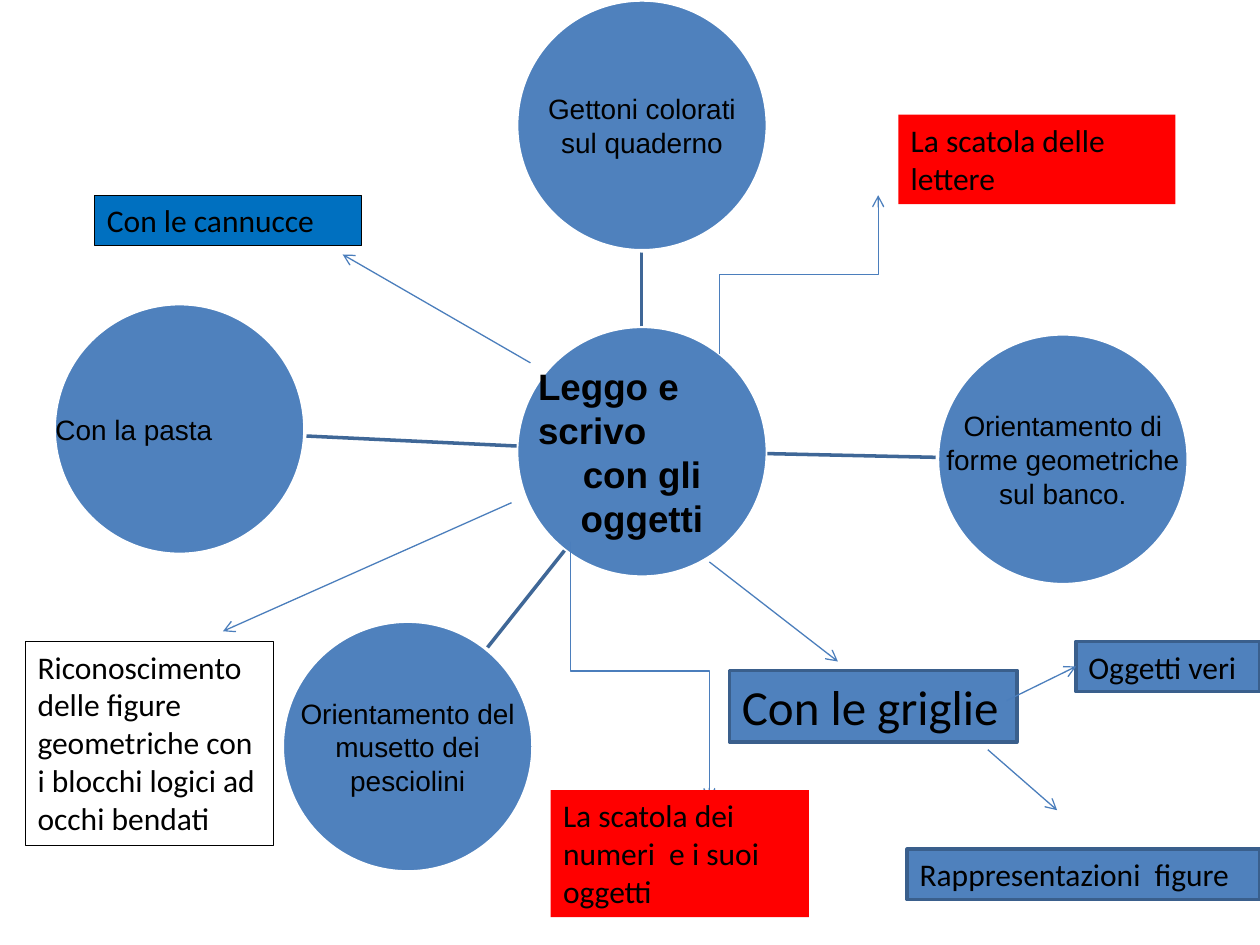
import pptx
import pptx.dml.color
import pptx.enum.shapes
import pptx.enum.text
import pptx.oxml.ns
import pptx.util
from lxml import etree

Inches = pptx.util.Inches
Pt = pptx.util.Pt
RGBColor = pptx.dml.color.RGBColor
ALIGN = pptx.enum.text.PP_ALIGN
SHAPE = pptx.enum.shapes.MSO_SHAPE
CONNECTOR = pptx.enum.shapes.MSO_CONNECTOR
qn = pptx.oxml.ns.qn

BLACK = RGBColor(0x00, 0x00, 0x00)
WHITE = RGBColor(0xFF, 0xFF, 0xFF)
RED = RGBColor(0xFF, 0x00, 0x00)
BLUE = RGBColor(0x4F, 0x81, 0xBD)
BRIGHT_BLUE = RGBColor(0x00, 0x70, 0xC0)
SPOKE_BLUE = RGBColor(0x3F, 0x67, 0x97)
BORDER_BLUE = RGBColor(0x3A, 0x5F, 0x8C)
ARROW_BLUE = RGBColor(0x4B, 0x7E, 0xBC)

DIAMETER = 1.99


class MindMap:
    def __init__(self, page):
        self.page = page

    def set_text(self, frame, lines, size, font, align=ALIGN.LEFT, bold=False):
        frame.word_wrap = True
        frame.text = "\n".join(lines)
        for para in frame.paragraphs:
            para.alignment = align
            para.font.name = font
            para.font.size = Pt(size)
            para.font.bold = bold
            para.font.color.rgb = BLACK

    def shape(self, kind, left, top, width, height, fill, line, weight):
        shape = self.page.shapes.add_shape(
            kind, Inches(left), Inches(top), Inches(width), Inches(height))
        shape.shadow.inherit = False
        if fill is None:
            shape.fill.background()
        else:
            shape.fill.solid()
            shape.fill.fore_color.rgb = fill
        if line is None:
            shape.line.fill.background()
        else:
            shape.line.color.rgb = line
            shape.line.width = Pt(weight)
        return shape

    def circle(self, left, top, lines, size=16, align=ALIGN.CENTER, bold=False, margin=0.01):
        """Draw a disc with a text box over its full width; return the text frame."""
        self.shape(SHAPE.OVAL, left, top, DIAMETER, DIAMETER, BLUE, WHITE, 2)
        box = self.page.shapes.add_textbox(
            Inches(left), Inches(top), Inches(DIAMETER), Inches(DIAMETER))
        frame = box.text_frame
        frame.margin_left = frame.margin_right = Inches(margin)
        frame.margin_top = frame.margin_bottom = Inches(0.01)
        frame.vertical_anchor = pptx.enum.text.MSO_ANCHOR.MIDDLE
        self.set_text(frame, lines, size, "Arial", align, bold)
        return frame

    def label(self, left, top, width, height, text, fill=BLUE, line=BORDER_BLUE,
              weight=2, size=18):
        box = self.shape(SHAPE.RECTANGLE, left, top, width, height, fill, line, weight)
        frame = box.text_frame
        frame.vertical_anchor = pptx.enum.text.MSO_ANCHOR.TOP
        self.set_text(frame, [text], size, "Calibri")
        frame.auto_size = pptx.enum.text.MSO_AUTO_SIZE.SHAPE_TO_FIT_TEXT
        return box

    def connector(self, kind, start, end, color, weight):
        line = self.page.shapes.add_connector(kind, *map(Inches, (*start, *end)))
        line.line.color.rgb = color
        line.line.width = Pt(weight)
        etree.SubElement(line._element.spPr, qn("a:effectLst"))
        return line

    def spoke(self, start, end):
        self.connector(CONNECTOR.STRAIGHT, start, end, SPOKE_BLUE, 2)

    def arrow(self, start, end, kind=CONNECTOR.STRAIGHT):
        line = self.connector(kind, start, end, ARROW_BLUE, 0.75)
        outline = line._element.spPr.find(qn("a:ln"))
        etree.SubElement(outline, qn("a:tailEnd"), type="arrow")
        return line

    def elbow_arrow(self, start, end):
        """Draw a bent arrow that leaves vertically: a horizontal one, turned."""
        (x1, y1), (x2, y2) = start, end
        middle_x, middle_y = (x1 + x2) / 2, (y1 + y2) / 2
        turn = 1 if y2 < y1 else -1
        unturned = [(middle_x + turn * (y - middle_y), middle_y - turn * (x - middle_x))
                    for x, y in (start, end)]
        line = self.arrow(*unturned, kind=CONNECTOR.ELBOW)
        degrees = 90 if turn == 1 else 270
        line._element.spPr.find(qn("a:xfrm")).set("rot", str(degrees * 60000))


def main():
    deck = pptx.Presentation()
    deck.slide_width = Inches(10)
    deck.slide_height = Inches(7.5)
    mind_map = MindMap(deck.slides.add_slide(deck.slide_layouts[6]))

    hub = mind_map.circle(4.1, 2.59, ["Leggo e scrivo", "con gli oggetti"],
                          size=21, bold=True, margin=0.08)
    first = hub.paragraphs[0]
    first.alignment = ALIGN.LEFT
    first._p.get_or_add_pPr().set("marL", str(Inches(0.09)))

    for start, end in [
        ((5.09, 2.59), (5.09, 1.99)),
        ((6.09, 3.6), (7.44, 3.63)),
        ((4.48, 4.37), (3.86, 5.15)),
        ((4.1, 3.54), (2.42, 3.46)),
    ]:
        mind_map.spoke(start, end)

    mind_map.circle(4.1, 0, ["Gettoni colorati", "sul quaderno"])
    mind_map.circle(7.44, 2.65, ["Orientamento di forme geometriche sul banco."])
    mind_map.circle(2.24, 4.93, ["Orientamento del musetto dei pesciolini"])
    mind_map.circle(0.43, 2.41, ["Con la pasta"], align=ALIGN.LEFT)

    for start, end in [
        ((5.63, 4.46), (6.65, 5.25)),
        ((7.84, 5.95), (8.39, 6.43)),
        ((4.21, 2.88), (2.72, 2.02)),
        ((4.06, 3.99), (1.77, 5.01)),
    ]:
        mind_map.arrow(start, end)
    mind_map.elbow_arrow((5.71, 2.81), (6.97, 1.55))
    mind_map.elbow_arrow((4.53, 4.3), (5.63, 6.35))

    mind_map.label(5.79, 5.32, 2.28, 0.57, "Con le griglie", size=28)
    real_objects = mind_map.label(8.54, 5.09, 1.46, 0.4, "Oggetti veri")
    mind_map.arrow((7.99, 5.56), (8.54, 5.29)).end_connect(real_objects, 1)
    mind_map.label(7.2, 6.74, 2.8, 0.4, "Rappresentazioni  figure")
    mind_map.label(0.75, 1.55, 2.12, 0.4, "Con le cannucce", BRIGHT_BLUE, BLACK, 0.75)
    mind_map.label(7.13, 0.91, 2.2, 0.71, "La scatola delle lettere", RED, None)
    mind_map.label(4.37, 6.27, 2.05, 1.01, "La scatola dei numeri  e i suoi oggetti",
                   RED, None)
    mind_map.label(0.2, 5.09, 1.97, 1.62,
                   "Riconoscimento delle figure geometriche con i blocchi logici "
                   "ad occhi bendati", None, BLACK, 0.75)

    deck.save("out.pptx")


if __name__ == "__main__":
    main()
